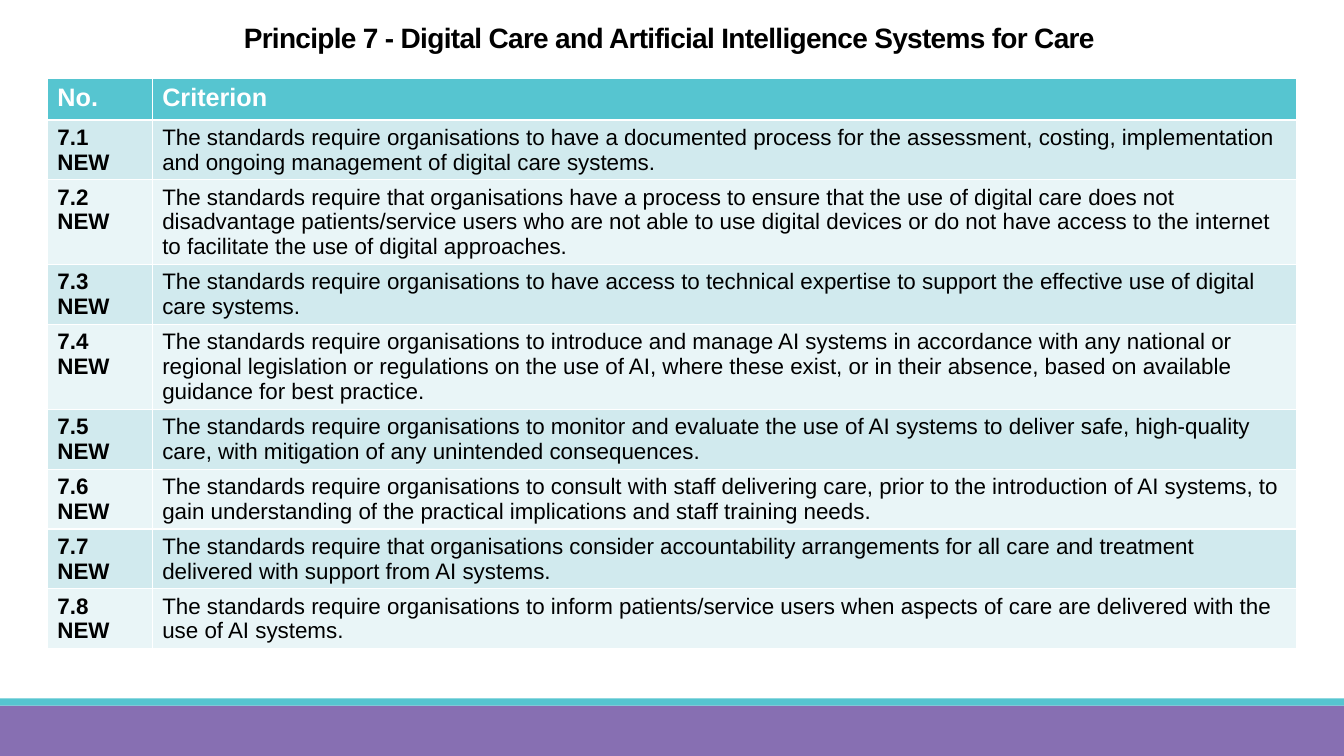
from dataclasses import dataclass

from pptx import Presentation
from pptx.dml.color import RGBColor as RGB
from pptx.enum.shapes import MSO_SHAPE as SHAPE
from pptx.enum.text import MSO_ANCHOR as ANCHOR, MSO_AUTO_SIZE as AUTO, PP_ALIGN as ALIGN
from pptx.util import Inches, Pt

TITLE = "Principle 7 - Digital Care and Artificial Intelligence Systems for Care "
HEADINGS = ("No.", "Criterion")
STATUS = "NEW"
PRINCIPLE = 7
CRITERIA = [
    "The standards require organisations to have a documented process for the assessment, "
    "costing, implementation and ongoing management of digital care systems.",
    "The standards require that organisations have a process to ensure that the use of digital "
    "care does not disadvantage patients/service users who are not able to use digital devices "
    "or do not have access to the internet to facilitate the use of digital approaches.",
    "The standards require organisations to have access to technical expertise to support the "
    "effective use of digital care systems.",
    "The standards require organisations to introduce and manage AI systems in accordance with "
    "any national or regional legislation or regulations on the use of AI, where these exist, "
    "or in their absence, based on available guidance for best practice.",
    "The standards require organisations to monitor and evaluate the use of AI systems to "
    "deliver safe, high-quality care, with mitigation of any unintended consequences.",
    "The standards require organisations to consult with staff delivering care, prior to the "
    "introduction of AI systems, to gain understanding of the practical implications and staff "
    "training needs.",
    "The standards require that organisations consider accountability arrangements for all care "
    "and treatment delivered with support from AI systems.",
    "The standards require organisations to inform patients/service users when aspects of care "
    "are delivered with the use of AI systems.",
]
COLUMN_WIDTHS = (1.04, 11.35)
ROW_HEIGHT = 0.41


@dataclass(frozen=True)
class Theme:
    font: str = "Arial"
    black: RGB = RGB.from_string("000000")
    white: RGB = RGB.from_string("FFFFFF")
    teal: RGB = RGB.from_string("56C5D0")
    purple: RGB = RGB.from_string("876FB2")
    bands: tuple = (RGB.from_string("D1EAEE"), RGB.from_string("E9F5F7"))
    title_size: int = 20
    heading_size: int = 18
    body_size: int = 16


THEME = Theme()


def style(p, size, color, bold):
    p.font.name = THEME.font
    p.font.size = Pt(size)
    p.font.color.rgb = color
    p.font.bold = bold


def add_title(slide):
    sp = slide.shapes.title
    sp.left, sp.top, sp.width, sp.height = map(Inches, (1.42, 0.2, 10.5, 0.71))
    sp.fill.solid()
    sp.fill.fore_color.rgb = THEME.white
    tf = sp.text_frame
    tf.text = TITLE
    tf.word_wrap = True
    tf.auto_size = AUTO.NONE
    tf.vertical_anchor = ANCHOR.TOP
    p = tf.paragraphs[0]
    p.alignment = ALIGN.CENTER
    p.line_spacing = 0.85
    style(p, THEME.title_size, THEME.black, True)
    p.runs[0].font.name = THEME.font
    p.runs[0]._r.get_or_add_rPr().set("spc", "-50")


def add_footer_bar(slide, top, height, color):
    sp = slide.shapes.add_shape(SHAPE.RECTANGLE, 0, Inches(top), Inches(13.33), Inches(height))
    sp.shadow.inherit = False
    sp.fill.solid()
    sp.fill.fore_color.rgb = color
    sp.line.fill.background()


def fill_cell(cell, text, fill, size, color, bold):
    cell.fill.solid()
    cell.fill.fore_color.rgb = fill
    cell.text_frame.text = text
    for p in cell.text_frame.paragraphs:
        style(p, size, color, bold)


def add_criteria_table(slide):
    count = len(CRITERIA) + 1
    table = slide.shapes.add_table(
        count, len(HEADINGS), Inches(0.47), Inches(0.78),
        Inches(sum(COLUMN_WIDTHS)), Inches(count * ROW_HEIGHT)).table
    for column, width in zip(table.columns, COLUMN_WIDTHS):
        column.width = Inches(width)
    for col, heading in enumerate(HEADINGS):
        fill_cell(table.cell(0, col), heading, THEME.teal, THEME.heading_size, THEME.white, True)
    for row, criterion in enumerate(CRITERIA, 1):
        band = THEME.bands[(row - 1) % 2]
        number = f"{PRINCIPLE}.{row}\n{STATUS}"
        for col, (text, bold) in enumerate(((number, True), (criterion, False))):
            fill_cell(table.cell(row, col), text, band, THEME.body_size, THEME.black, bold)


def main():
    prs = Presentation()
    prs.slide_width, prs.slide_height = Inches(13.33), Inches(7.5)
    slide = prs.slides.add_slide(prs.slide_layouts[5])
    add_footer_bar(slide, 7, 0.5, THEME.purple)
    add_footer_bar(slide, 6.93, 0.07, THEME.teal)
    add_title(slide)
    add_criteria_table(slide)
    prs.save("out.pptx")


if __name__ == "__main__":
    main()
